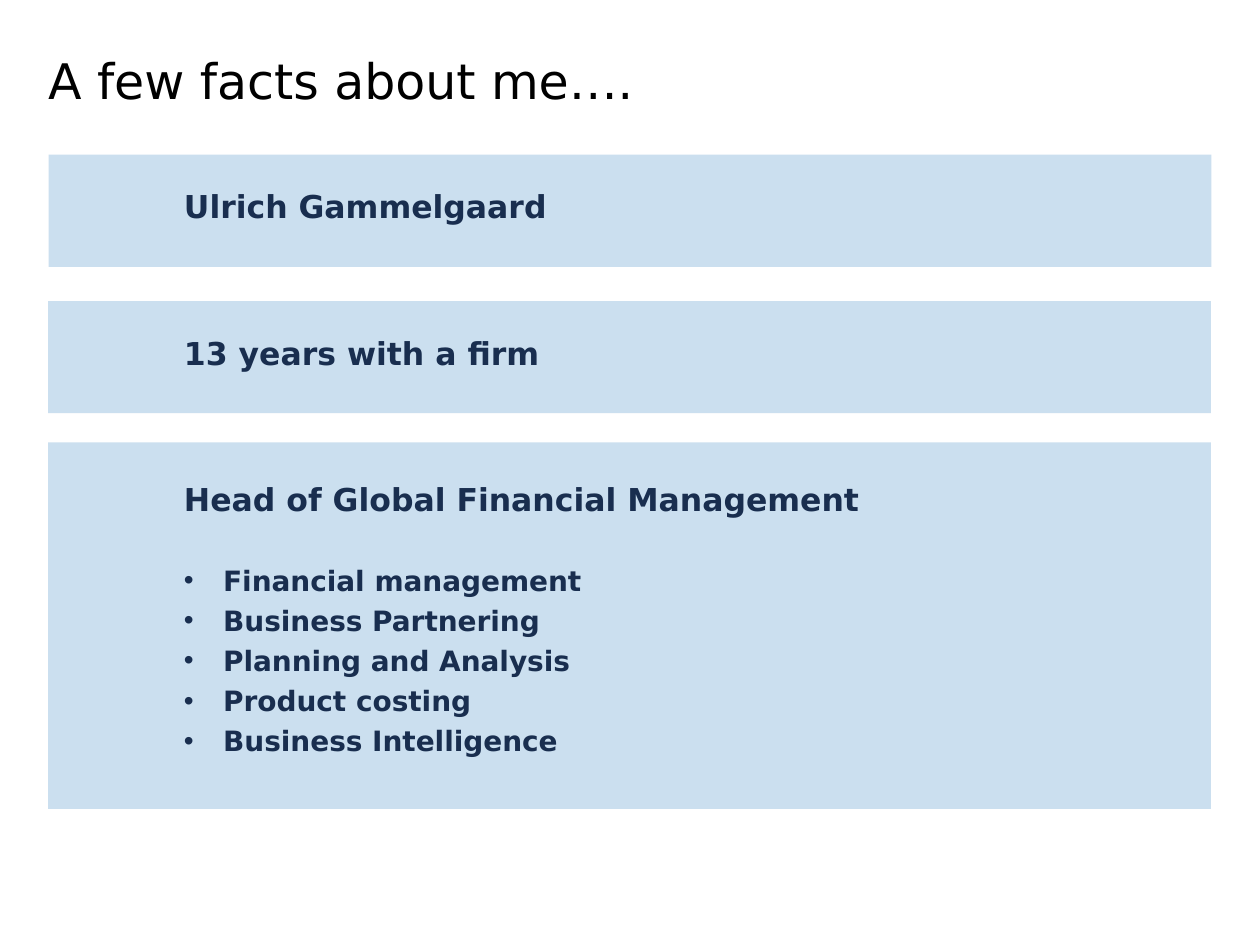
from dataclasses import dataclass

from lxml.etree import SubElement
from pptx import Presentation
from pptx.dml.color import RGBColor
from pptx.enum.shapes import MSO_SHAPE
from pptx.enum.text import MSO_ANCHOR
from pptx.oxml.ns import qn
from pptx.util import Cm, Pt


@dataclass(frozen=True)
class Theme:
    font: str = "DejaVu Sans"
    black: RGBColor = RGBColor(0x00, 0x00, 0x00)
    navy: RGBColor = RGBColor(0x19, 0x2E, 0x4F)
    pale: RGBColor = RGBColor(0xCB, 0xDF, 0xEF)
    title: Pt = Pt(28)
    head: Pt = Pt(18)
    item: Pt = Pt(16)


theme = Theme()


def add_box(left, top, width, height):
    """Add a wrapping text box without margins and return its frame."""
    frame = slide.shapes.add_textbox(Cm(left), Cm(top), Cm(width), Cm(height)).text_frame
    frame.word_wrap = True
    frame.margin_left = frame.margin_top = frame.margin_right = frame.margin_bottom = 0
    return frame


def style(para, size, color, bold=True):
    for run in para.runs:
        run.font.name = theme.font
        run.font.size = size
        run.font.bold = bold
        run.font.color.rgb = color


deck = Presentation()
deck.slide_width, deck.slide_height = Cm(25.4), Cm(19.05)
slide = deck.slides.add_slide(deck.slide_layouts[6])

# Title
frame = add_box(0.97, 0.56, 19.53, 1.75)
frame.vertical_anchor = MSO_ANCHOR.BOTTOM
frame.margin_bottom = Cm(0.1)
frame.text = "A few facts about me…."
frame.paragraphs[0].line_spacing = 1.05
style(frame.paragraphs[0], theme.title, theme.black, bold=False)

# Bands: left, top, height, text offset, text height, heading, items
bands = [
    (0.98, 3.12, 2.26, 0.66, 0.76, "Ulrich Gammelgaard", []),
    (0.97, 6.07, 2.26, 0.66, 0.76, "13 years with a firm", []),
    (0.97, 8.92, 7.39, 0.76, 5.69, "Head of Global Financial Management", [
        "Financial management",
        "Business Partnering",
        "Planning and Analysis",
        "Product costing",
        "Business Intelligence",
    ]),
]
for left, top, height, drop, depth, head, items in bands:
    band = slide.shapes.add_shape(
        MSO_SHAPE.RECTANGLE, Cm(left), Cm(top), Cm(23.44), Cm(height))
    band.shadow.inherit = False
    band.fill.solid()
    band.fill.fore_color.rgb = theme.pale
    band.line.fill.background()

    frame = add_box(3.71, top + drop, 20.37, depth)
    frame.text = head
    style(frame.paragraphs[0], theme.head, theme.navy)

    for index, item in enumerate(items):
        para = frame.add_paragraph()
        para.text = item
        para.space_before = Pt(3.7 if index else 26)
        props = para._p.get_or_add_pPr()
        props.set("marL", str(Cm(0.79)))
        props.set("indent", str(-Cm(0.79)))
        SubElement(props, qn("a:buFont"), typeface="Arial")
        SubElement(props, qn("a:buChar"), char="•")
        style(para, theme.item, theme.navy)

deck.save("out.pptx")
